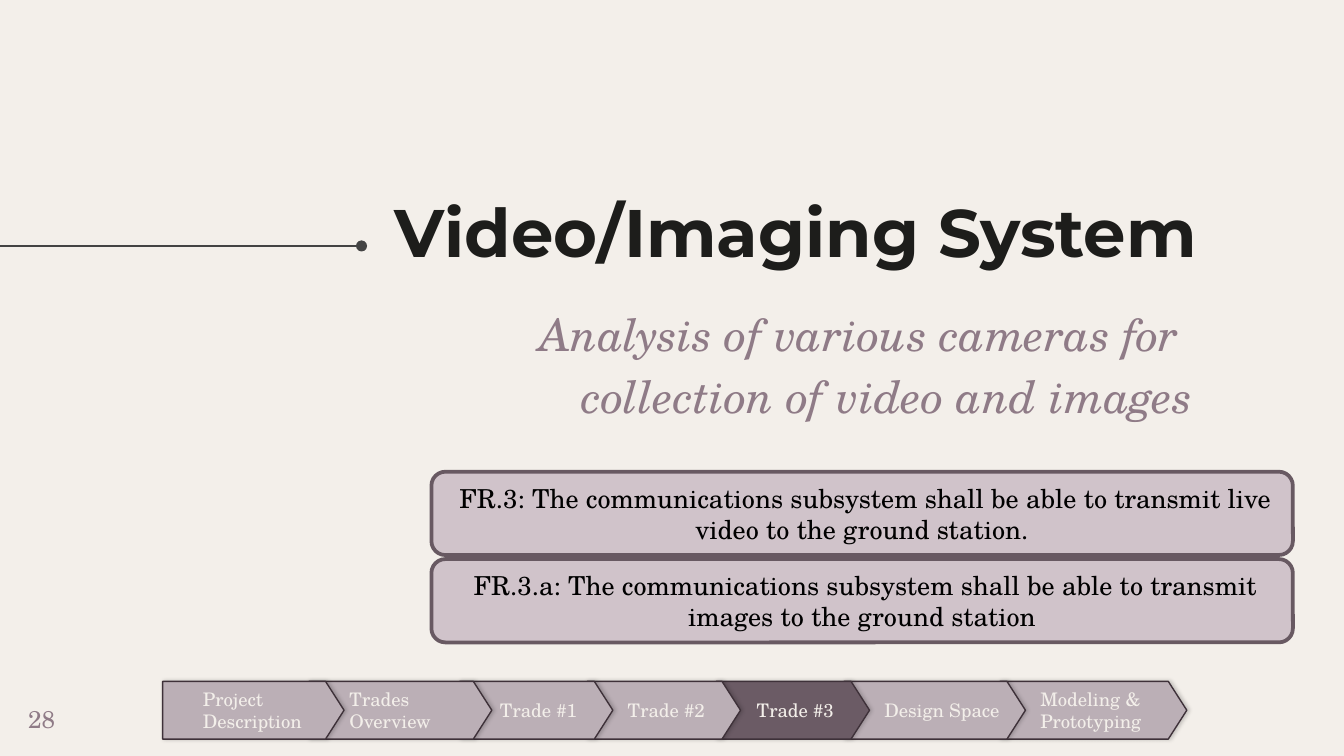
"""Build the Video/Imaging System section slide."""
from lxml import etree
from pptx import Presentation
from pptx.dml.color import RGBColor
from pptx.enum.shapes import MSO_CONNECTOR, MSO_SHAPE
from pptx.enum.text import MSO_ANCHOR, PP_ALIGN
from pptx.oxml import parse_xml
from pptx.oxml.ns import qn
from pptx.util import Inches, Pt

LEFT, CENTER = PP_ALIGN.LEFT, PP_ALIGN.CENTER
TOP, MIDDLE, BOTTOM = MSO_ANCHOR.TOP, MSO_ANCHOR.MIDDLE, MSO_ANCHOR.BOTTOM
ROUND, PLATE = MSO_SHAPE.ROUNDED_RECTANGLE, MSO_SHAPE.PENTAGON
STRAIGHT = MSO_CONNECTOR.STRAIGHT

CREAM = RGBColor(0xF3, 0xEF, 0xEA)
INK = RGBColor(0x1D, 0x1D, 0x1B)
GRAY = RGBColor(0x43, 0x43, 0x43)
BLACK = RGBColor(0, 0, 0)
MAUVE = RGBColor(0x8F, 0x7B, 0x87)
PINK = RGBColor(0xD0, 0xC3, 0xCA)
PLUM = RGBColor(0x68, 0x59, 0x62)
PALE = RGBColor(0xBB, 0xAF, 0xB6)
DARK = RGBColor(0x6B, 0x5B, 0x65)
EDGE = RGBColor(0x3E, 0x31, 0x39)

SERIF = "TeX Gyre Schola"
TITLE = "Video/Imaging System"
SUB = "Analysis of various cameras for collection of video and images"
PAGE = "28"
NEEDS = [
    " FR.3: The communications subsystem shall be able to transmit live video to the ground station.",
    " FR.3.a: The communications subsystem shall be able to transmit images to the ground station",
]
STEPS = [
    ("Project Description", 1.21, 1.35),
    ("Trades Overview", 2.3, 1.36),
    ("Trade #1", 3.42, 1.14),
    ("Trade #2", 4.37, 1.14),
    ("Trade #3", 5.33, 1.14),
    ("Design Space", 6.28, 1.35),
    ("Modeling & Prototyping", 7.44, 1.39),
]
ACTIVE = "Trade #3"

HEAD_FONT = {"name": "Montserrat", "size": Pt(36), "bold": True}
SUB_FONT = {"name": SERIF, "size": Pt(24), "italic": True}
PAGE_FONT = {"name": SERIF, "size": Pt(13)}
NEED_FONT = {"name": SERIF, "size": Pt(14)}
STEP_FONT = {"name": SERIF, "size": Pt(10)}

SHADOW = (
    '<a:outerShdw xmlns:a="http://schemas.openxmlformats.org/drawingml/2006/main"'
    ' blurRad="27940" dist="10160" dir="0" algn="tl" rotWithShape="0">'
    '<a:srgbClr val="000000"><a:alpha val="20000"/></a:srgbClr></a:outerShdw>'
)


def write(shape, text, font, color, align=LEFT, anchor=TOP, pads=(0.1,) * 4):
    frame = shape.text_frame
    frame.word_wrap = True
    frame.vertical_anchor = anchor
    for side, pad in zip(("left", "top", "right", "bottom"), pads):
        setattr(frame, "margin_" + side, Inches(pad))
    para = frame.paragraphs[0]
    para.alignment = align
    run = para.add_run()
    run.text = text
    for key, value in font.items():
        setattr(run.font, key, value)
    run.font.color.rgb = color
    return para


def label(slide, box, *style):
    return write(slide.shapes.add_textbox(*map(Inches, box)), *style)


def block(slide, kind, box, bend, fill, edge, width):
    shape = slide.shapes.add_shape(kind, *map(Inches, box))
    shape.adjustments[0] = bend
    shape.shadow.inherit = False
    shape.fill.solid()
    shape.fill.fore_color.rgb = fill
    shape.line.color.rgb = edge
    shape.line.width = Pt(width)
    return shape


def rule(slide):
    ends = map(Inches, (2.69, 1.83, -0.02, 1.83))
    line = slide.shapes.add_connector(STRAIGHT, *ends)
    line.line.color.rgb = GRAY
    line.line.width = Pt(0.75)
    props = line._element.spPr
    etree.SubElement(props.find(qn("a:ln")), qn("a:headEnd"), type="oval")
    etree.SubElement(props, qn("a:effectLst"))


def main():
    deck = Presentation()
    deck.slide_width = Inches(10)
    deck.slide_height = Inches(10 * 9 / 16)
    slide = deck.slides.add_slide(deck.slide_layouts[6])
    slide.background.fill.solid()
    slide.background.fill.fore_color.rgb = CREAM

    rule(slide)
    label(slide, (2.84, 0.85, 7, 1.27), TITLE, HEAD_FONT, INK, LEFT, BOTTOM)
    para = label(slide, (3.5, 2.12, 5.7, 1.11), SUB, SUB_FONT, MAUVE, CENTER)
    para.line_spacing = 1.15
    props = para._p.get_or_add_pPr()
    props.set("marL", str(Inches(0.5)))
    props.set("indent", str(Inches(-0.42)))

    for row, need in enumerate(NEEDS):
        box = (3.21, 3.51 + 0.65 * row, 6.41, 0.62)
        shape = block(slide, ROUND, box, 0.167, PINK, PLUM, 2)
        write(shape, need, NEED_FONT, BLACK, CENTER, MIDDLE, (0.1, 0.05) * 2)

    label(slide, (0.01, 5.14, 0.6, 0.43), PAGE, PAGE_FONT, MAUVE, CENTER)

    for name, left, width in reversed(STEPS):
        fill = DARK if name == ACTIVE else PALE
        box = (left, 5.07, width, 0.43)
        shape = block(slide, PLATE, box, 0.32, fill, EDGE, 0.75)
        shape._element.spPr.find(qn("a:effectLst")).append(parse_xml(SHADOW))
        write(shape, name, STEP_FONT, CREAM, LEFT, MIDDLE, (0.3, 0, 0, 0))

    deck.save("out.pptx")


if __name__ == "__main__":
    main()
